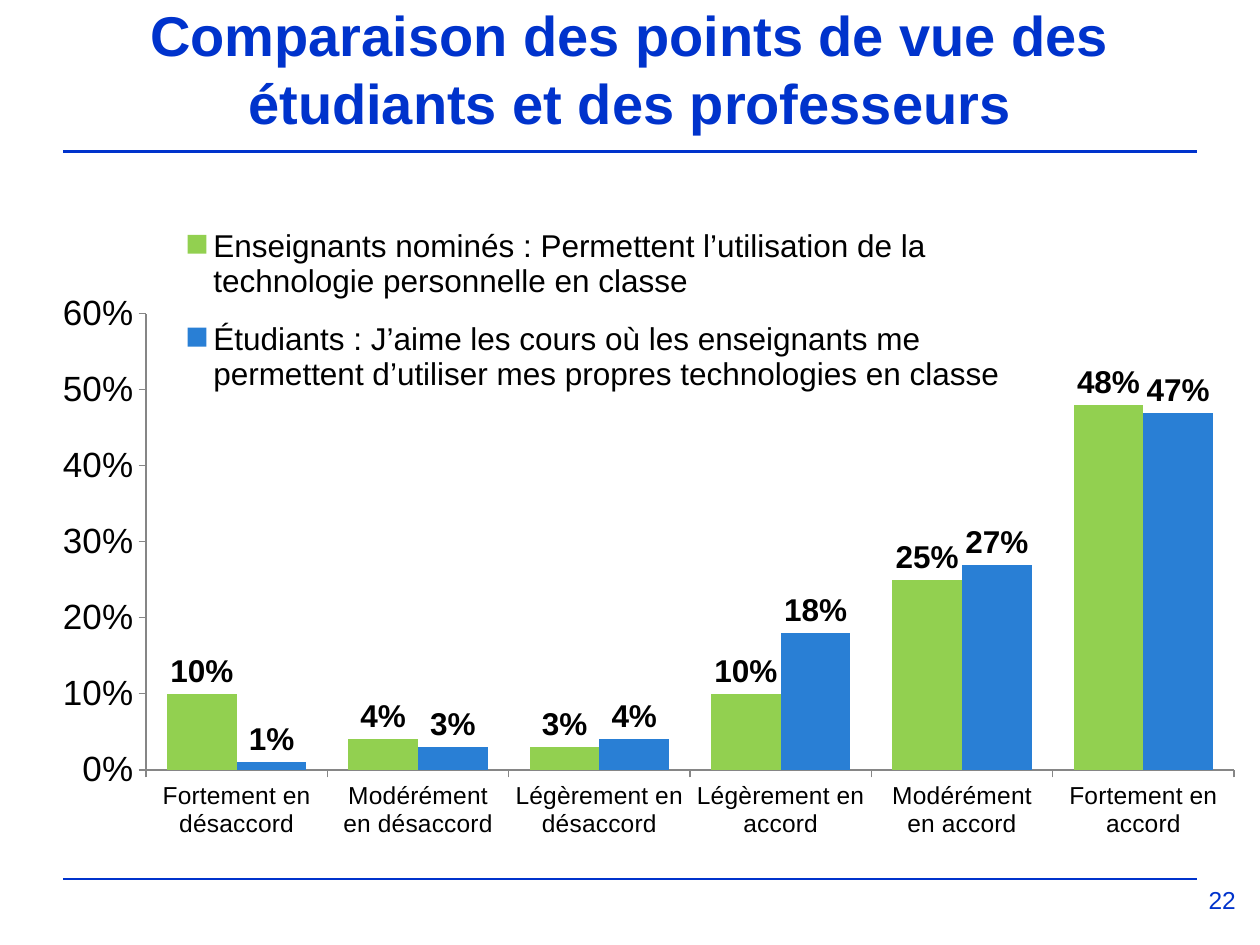
from pptx import Presentation
from pptx.chart.data import CategoryChartData
from pptx.dml.color import RGBColor
from pptx.enum.chart import XL_CHART_TYPE as ChartType
from pptx.enum.chart import XL_LABEL_POSITION as LabelPosition
from pptx.enum.chart import XL_LEGEND_POSITION as LegendPosition
from pptx.enum.chart import XL_TICK_MARK as TickMark
from pptx.enum.shapes import MSO_CONNECTOR as Connector
from pptx.enum.text import MSO_ANCHOR as Anchor
from pptx.enum.text import MSO_AUTO_SIZE as AutoSize
from pptx.enum.text import PP_ALIGN as Align
from pptx.oxml import parse_xml
from pptx.oxml.ns import nsdecls, qn
from pptx.util import Inches, Pt

WIDTH, HEIGHT = Inches(10), Inches(7.5)
COLORS = {"blue": "0033CC", "teachers": "92D050", "students": "297FD5",
          "text": "000000", "axis": "868686"}
TITLE = "Comparaison des points de vue des\vétudiants et des professeurs"
CATEGORIES = ["Fortement en désaccord", "Modérément en désaccord",
              "Légèrement en désaccord", "Légèrement en accord",
              "Modérément en accord", "Fortement en accord"]
SERIES = [
    ("teachers", "Enseignants nominés : Permettent l’utilisation de la "
     "technologie personnelle en classe", [0.10, 0.04, 0.03, 0.10, 0.25, 0.48]),
    ("students", "Étudiants : J’aime les cours où les enseignants me "
     "permettent d’utiliser mes propres technologies en classe",
     [0.01, 0.03, 0.04, 0.18, 0.27, 0.47]),
]


def share(left, top, width, height):
    """Turn shares of the slide into a box of lengths."""
    return (int(left * WIDTH), int(top * HEIGHT),
            int(width * WIDTH), int(height * HEIGHT))


def color(name):
    return RGBColor.from_string(COLORS[name])


def set_font(font, size, name="text", bold=False):
    font.name, font.size, font.bold = "Arial", Pt(size), bold
    font.color.rgb = color(name)


def fill_text(shape, text, size, anchor, bold=False):
    frame = shape.text_frame
    frame.word_wrap, frame.auto_size = True, AutoSize.NONE
    frame.vertical_anchor = anchor
    para = frame.paragraphs[0]
    para.text, para.alignment = text, Align.CENTER
    set_font(para.font, size, "blue", bold)


def add_title(page, box):
    title = page.shapes.title
    title.left, title.top, title.width, title.height = box
    fill_text(title, TITLE, 32, Anchor.BOTTOM, bold=True)


def add_rule(page, box):
    left, top, width, _ = box
    rule = page.shapes.add_connector(Connector.STRAIGHT, left, top, left + width, top)
    rule.line.color.rgb, rule.line.width = color("blue"), Pt(1.5)
    rule._element.spPr.append(parse_xml(f"<a:effectLst {nsdecls('a')}/>"))


def add_page_number(page, box):
    fill_text(page.shapes.add_textbox(*box), "22", 14, Anchor.TOP)


def place_part(element, index, shares, inner=False):
    """Give a chart part a fixed place, in shares of the chart."""
    for old in element.findall(qn("c:layout")):
        element.remove(old)
    target = '<c:layoutTarget val="inner"/>' if inner else ""
    modes = "".join(f'<c:{key}Mode val="edge"/>' for key in "xy")
    values = "".join(f'<c:{key} val="{value}"/>' for key, value in zip("xywh", shares))
    element.insert(index, parse_xml(
        f"<c:layout {nsdecls('c')}><c:manualLayout>{target}{modes}{values}"
        "</c:manualLayout></c:layout>"))


def format_axis(axis, size):
    axis.has_major_gridlines = False
    axis.major_tick_mark, axis.minor_tick_mark = TickMark.OUTSIDE, TickMark.NONE
    axis.format.line.color.rgb, axis.format.line.width = color("axis"), Pt(0.75)
    set_font(axis.tick_labels.font, size)


def add_opinion_chart(page, box):
    data = CategoryChartData(number_format="0%")
    data.categories = CATEGORIES
    for _, name, values in SERIES:
        data.add_series(name, values)
    chart = page.shapes.add_chart(ChartType.COLUMN_CLUSTERED, *box, data).chart
    chart.has_title = False
    chart.font.name, chart.font.size = "Calibri", Pt(10)
    chart.font.color.rgb = color("text")

    # Axes
    format_axis(chart.category_axis, 14)
    values = chart.value_axis
    format_axis(values, 20)
    values.minimum_scale, values.maximum_scale, values.major_unit = 0, 0.6, 0.1
    values.tick_labels.number_format = "0%"
    values.tick_labels.number_format_is_linked = False

    # Columns and their labels
    plot = chart.plots[0]
    plot.gap_width, plot.overlap, plot.vary_by_categories = 60, 0, False
    for (key, _, _), series in zip(SERIES, plot.series):
        series.format.fill.solid()
        series.format.fill.fore_color.rgb = color(key)
        labels = series.data_labels
        labels.show_value, labels.position = True, LabelPosition.OUTSIDE_END
        labels.number_format, labels.number_format_is_linked = "0%", False
        set_font(labels.font, 18, bold=True)

    # Legend over the empty part of the plot
    chart.has_legend = True
    legend = chart.legend
    legend.position, legend.include_in_layout = LegendPosition.TOP, False
    set_font(legend.font, 18)
    place_part(legend._element, 1, (0.12, 0.04, 0.7, 0.31))
    place_part(chart._chartSpace.chart.plotArea, 0, (0.1, 0.2, 0.9, 0.68), inner=True)


def main():
    deck = Presentation()
    deck.slide_width, deck.slide_height = WIDTH, HEIGHT
    page = deck.slides.add_slide(deck.slide_layouts[5])
    for top in (0.93, 0.16):
        add_rule(page, share(0.05, top, 0.9, 0))
    add_title(page, share(0, 0.05, 1, 0.1))
    add_page_number(page, share(0.94, 0.93, 0.06, 0.06))
    add_opinion_chart(page, share(0.02, 0.19, 0.96, 0.71))
    deck.save("out.pptx")


if __name__ == "__main__":
    main()
